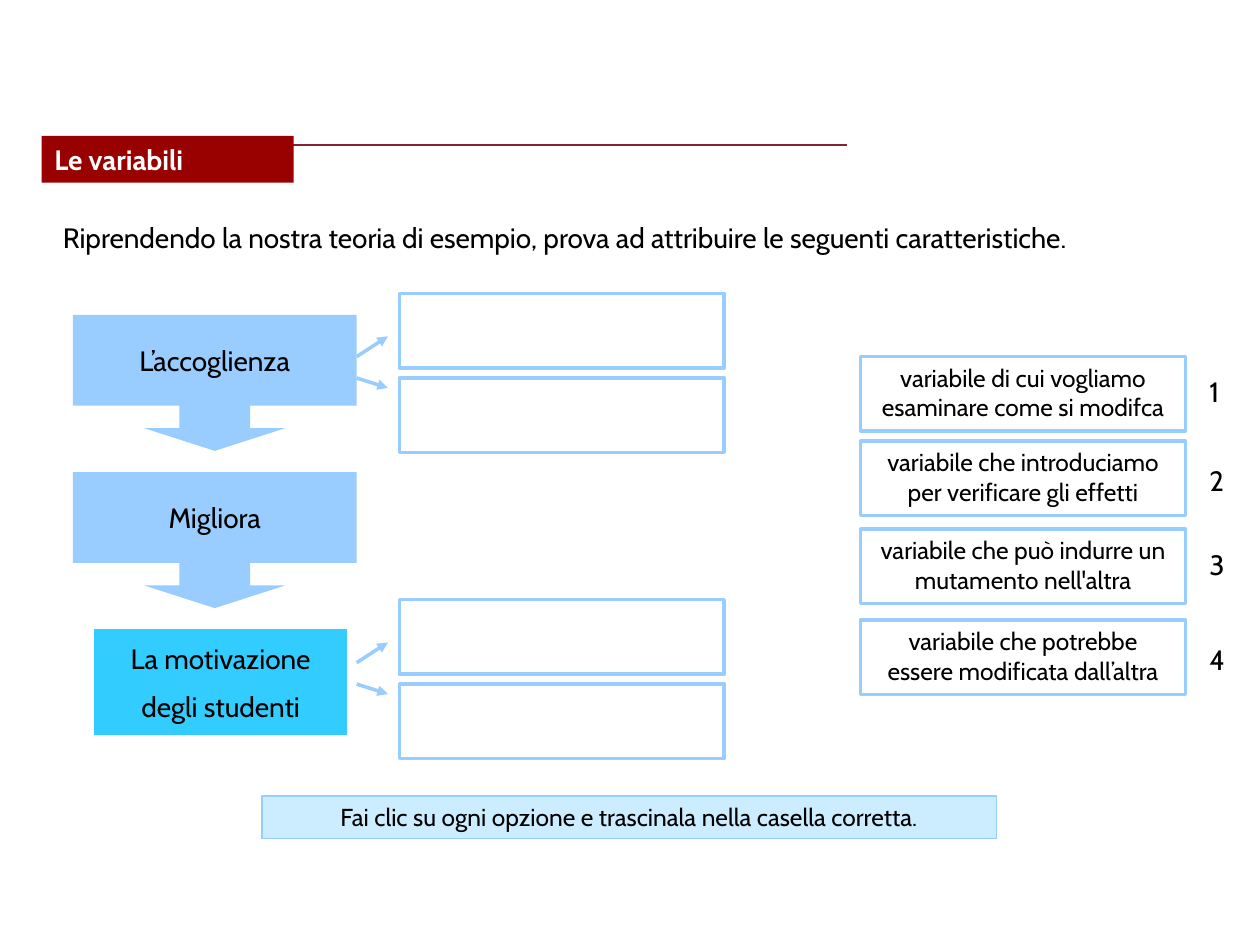
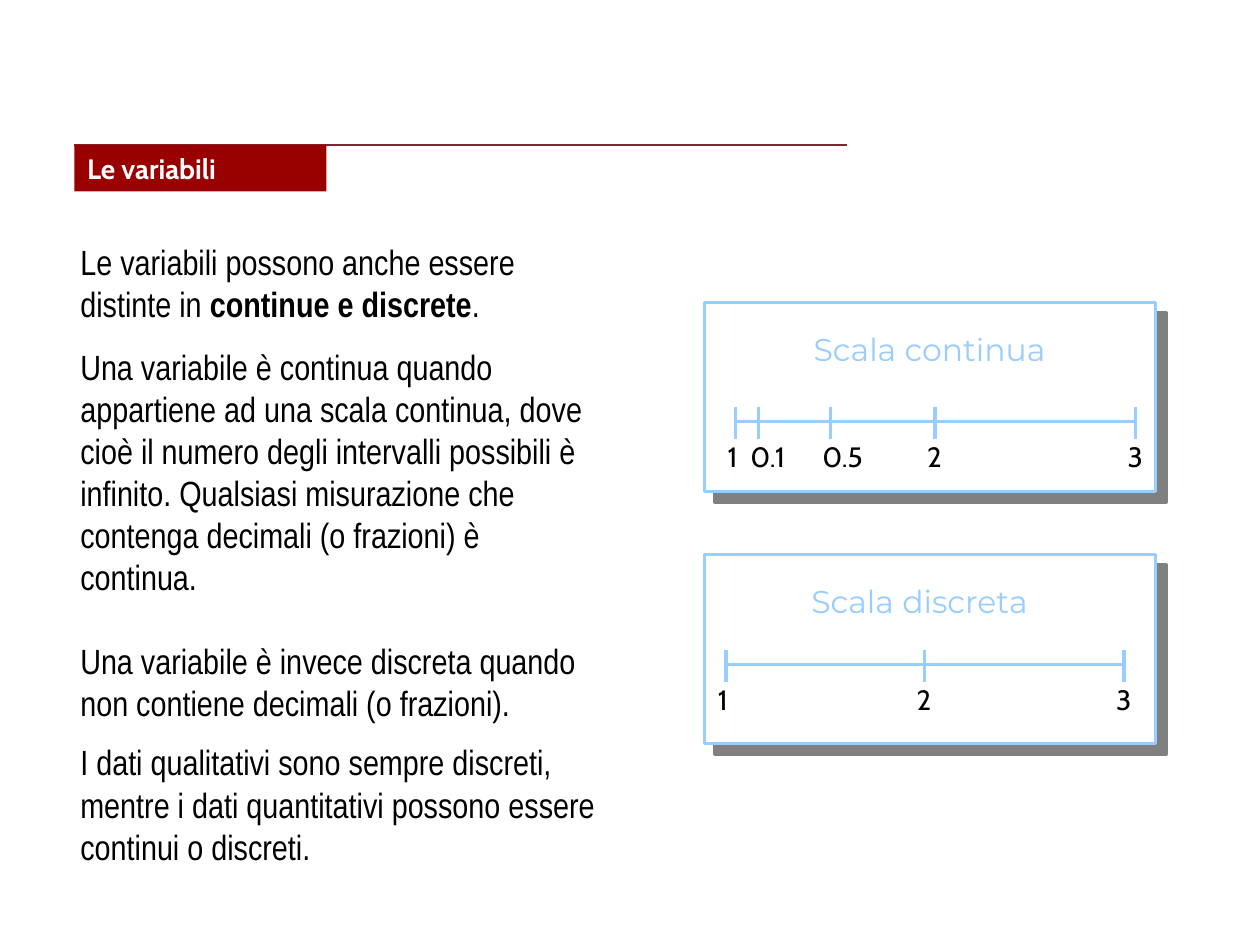
from dataclasses import dataclass

from lxml.etree import SubElement
from pptx import Presentation
from pptx.dml.color import RGBColor as Rgb
from pptx.enum.shapes import MSO_CONNECTOR as Connector, MSO_SHAPE as Shape
from pptx.enum.text import MSO_ANCHOR as Anchor, PP_ALIGN as Align
from pptx.oxml import parse_xml
from pptx.oxml.ns import nsdecls, qn
from pptx.util import Cm, Pt


@dataclass(frozen=True)
class Theme:
    red: str = "990000"
    rule: str = "822433"
    sky: str = "99CCFF"
    pale: str = "CCECFF"
    cyan: str = "33CCFF"
    outline: str = "3366FF"
    shadow: str = "808080"
    white: str = "FFFFFF"
    black: str = "000000"
    font: str = "Cabin"
    body_font: str = "Arial Narrow"
    scale_font: str = "Montserrat"
    small: int = 14
    normal: int = 16
    heading: int = 18
    body: int = 20


theme = Theme()


def add_box(shapes, at, text="", box=None, shape=None, fill=None, line=None, weight=2,
            font=theme.font, size=theme.normal, color=theme.black, bold=False,
            align=Align.LEFT, anchor=Anchor.TOP, wrap=True, margin=None, gaps=()):
    """Add a text box or shape; lines split paragraphs, asterisks enclose bold words."""
    left, top, width, height = (Cm(length) for length in at)
    if box is not None:
        box.left, box.top, box.width, box.height = left, top, width, height
    elif shape is None:
        box = shapes.add_textbox(left, top, width, height)
    else:
        box = shapes.add_shape(shape, left, top, width, height)
        box.shadow.inherit = False
    if fill:
        box.fill.solid()
        box.fill.fore_color.rgb = Rgb.from_string(fill)
    else:
        box.fill.background()
    if line:
        box.line.color.rgb = Rgb.from_string(line)
        box.line.width = Pt(weight)
    else:
        box.line.fill.background()

    frame = box.text_frame
    frame.word_wrap = wrap
    frame.vertical_anchor = anchor
    if margin is not None:
        frame.margin_left = frame.margin_right = Cm(margin)
        frame.margin_top = frame.margin_bottom = Cm(margin)
    for index, words in enumerate(text.split("\n") if text else []):
        para = frame.add_paragraph() if index else frame.paragraphs[0]
        para.alignment = align
        if index and gaps:
            para.space_before = Pt(gaps[index - 1])
        for part, piece in enumerate(words.split("*")):
            span = para.add_run()
            span.text = piece
            span.font.name = font
            span.font.size = Pt(size)
            span.font.bold = bold or part % 2 == 1
            span.font.color.rgb = Rgb.from_string(color)
    return box


def add_line(shapes, start, end, color=theme.sky, weight=2, arrow=False):
    line = shapes.add_connector(Connector.STRAIGHT, *(Cm(length) for length in start + end))
    line.line.color.rgb = Rgb.from_string(color)
    line.line.width = Pt(weight)
    if arrow:
        SubElement(line.line._get_or_add_ln(), qn("a:tailEnd"), type="triangle")
    SubElement(line._element.spPr, qn("a:effectLst"))
    return line


deck = Presentation()
deck.slide_width, deck.slide_height = Cm(25.4), Cm(19.05)

# Shared header: rule and red title band
pages = []
for left, top in ((0.84, 2.74), (1.5, 2.92)):
    page = deck.slides.add_slide(deck.slide_layouts[5])
    title = add_box(page.shapes, (left, top, 5.08, 0.94), "Le variabili",
                    box=page.shapes.title, fill=theme.red, color=theme.white, bold=True)
    rule = add_line(page.shapes, (1.5, 2.92), (17.07, 2.92), theme.rule, 1.5)
    title._element.addprevious(rule._element)
    pages.append(page)
exercise, scales = (page.shapes for page in pages)

# Exercise: introduction
add_box(exercise, (1.27, 4.45, 22.22, 0.69), margin=0,
        text="Riprendendo la nostra teoria di esempio, prova ad attribuire "
             "le seguenti caratteristiche.")

# Exercise: chain from cause to effect
for top, text in ((6.35, "L’accoglienza"), (9.52, "Migliora")):
    callout = add_box(exercise, (1.47, top, 5.72, 2.74), text,
                      shape=Shape.DOWN_ARROW_CALLOUT, fill=theme.sky,
                      align=Align.CENTER, anchor=Anchor.MIDDLE, wrap=False)
    for index, value in enumerate((0.519, 0.519, 0.167, 0.667)):
        callout.adjustments[index] = value
add_box(exercise, (1.91, 12.7, 5.08, 2.11), "La motivazione\ndegli studenti",
        shape=Shape.RECTANGLE, fill=theme.cyan, line=theme.cyan, weight=0.75,
        align=Align.CENTER, anchor=Anchor.MIDDLE, wrap=False, gaps=(8,))

# Exercise: empty answer boxes and their arrows
for top in (5.92, 12.09):
    for box_drop, start_drop, end_drop in ((0, 1.27, 0.86), (1.7, 1.7, 1.9)):
        add_box(exercise, (8.05, top + box_drop, 6.55, 1.5),
                shape=Shape.RECTANGLE, line=theme.sky)
        add_line(exercise, (7.19, top + start_drop), (7.82, top + end_drop), arrow=True)

# Exercise: numbered options
options = (
    (7.19, 7.42, "variabile di cui vogliamo esaminare come si modifca"),
    (8.89, 9.22, "variabile che introduciamo per verificare gli effetti"),
    (10.67, 10.92, "variabile che può indurre un mutamento nell'altra"),
    (12.5, 12.83, "variabile che potrebbe essere modificata dall’altra"),
)
for number, (top, number_top, text) in enumerate(options, 1):
    add_box(exercise, (17.35, top, 6.55, 1.5), text, shape=Shape.RECTANGLE,
            line=theme.sky, size=theme.small, align=Align.CENTER)
    add_box(exercise, (24.13, number_top, 0.84, 0.94), str(number))

# Exercise: instruction
add_box(exercise, (5.28, 16.05, 14.81, 0.86),
        "Fai clic su ogni opzione e trascinala nella casella corretta.",
        shape=Shape.RECTANGLE, fill=theme.pale, line=theme.sky, weight=0.75,
        size=theme.small, align=Align.CENTER)

# Scales: explanation
explanation = (
    "Le variabili possono anche essere distinte in *continue e discrete*.",
    "Una variabile è continua quando appartiene ad una scala continua, dove cioè "
    "il numero degli intervalli possibili è infinito. Qualsiasi misurazione che "
    "contenga decimali (o frazioni) è continua.",
    "Una variabile è invece discreta quando non contiene decimali (o frazioni).",
    "I dati qualitativi sono sempre discreti, mentre i dati quantitativi possono "
    "essere continui o discreti.",
)
add_box(scales, (1.37, 4.72, 11, 13.51), "\n".join(explanation),
        font=theme.body_font, size=theme.body, gaps=(12, 24, 10))

# Scales: one shadowed card for each number line
cards = (
    ("Scala continua", 6.1, 16.1, 8.5,
     ((14.83, "1"), (15.29, "0.1"), (16.74, "0.5"), (18.85, "2"), (22.89, "3"))),
    ("Scala discreta", 11.18, 15.9, 13.4,
     ((14.63, "1"), (18.64, "2"), (22.66, "3"))),
)
for heading, top, heading_left, axis, ticks in cards:
    group = scales.add_group_shape().shapes
    card = add_box(group, (14.2, top, 9.1, 3.81), shape=Shape.RECTANGLE,
                   fill=theme.white, line=theme.sky)
    effects = card._element.spPr.find(qn("a:effectLst"))
    effects.append(parse_xml(
        f'<a:outerShdw {nsdecls("a")} dist="{Pt(8.5)}" dir="2700000" algn="ctr" '
        f'rotWithShape="0"><a:srgbClr val="{theme.shadow}"/></a:outerShdw>'))

    label = add_box(group, (heading_left, top + 0.43, 5.28, 0.84), heading,
                    font=theme.scale_font, size=theme.heading, color=theme.sky,
                    align=Align.CENTER, wrap=False)
    span = label.text_frame.paragraphs[0].runs[0]
    span.font._element.insert(0, parse_xml(
        f'<a:ln {nsdecls("a")} w="{Pt(0.75)}"><a:solidFill>'
        f'<a:srgbClr val="{theme.outline}"/></a:solidFill></a:ln>'))

    add_line(group, (ticks[0][0], axis), (ticks[-1][0], axis))
    for position, value in ticks:
        add_line(group, (position, axis - 0.3), (position, axis + 0.34))
        add_box(group, (position - 0.41, axis + 0.23, 1.83 if "." in value else 1.27, 0.94),
                value)

deck.save("out.pptx")
